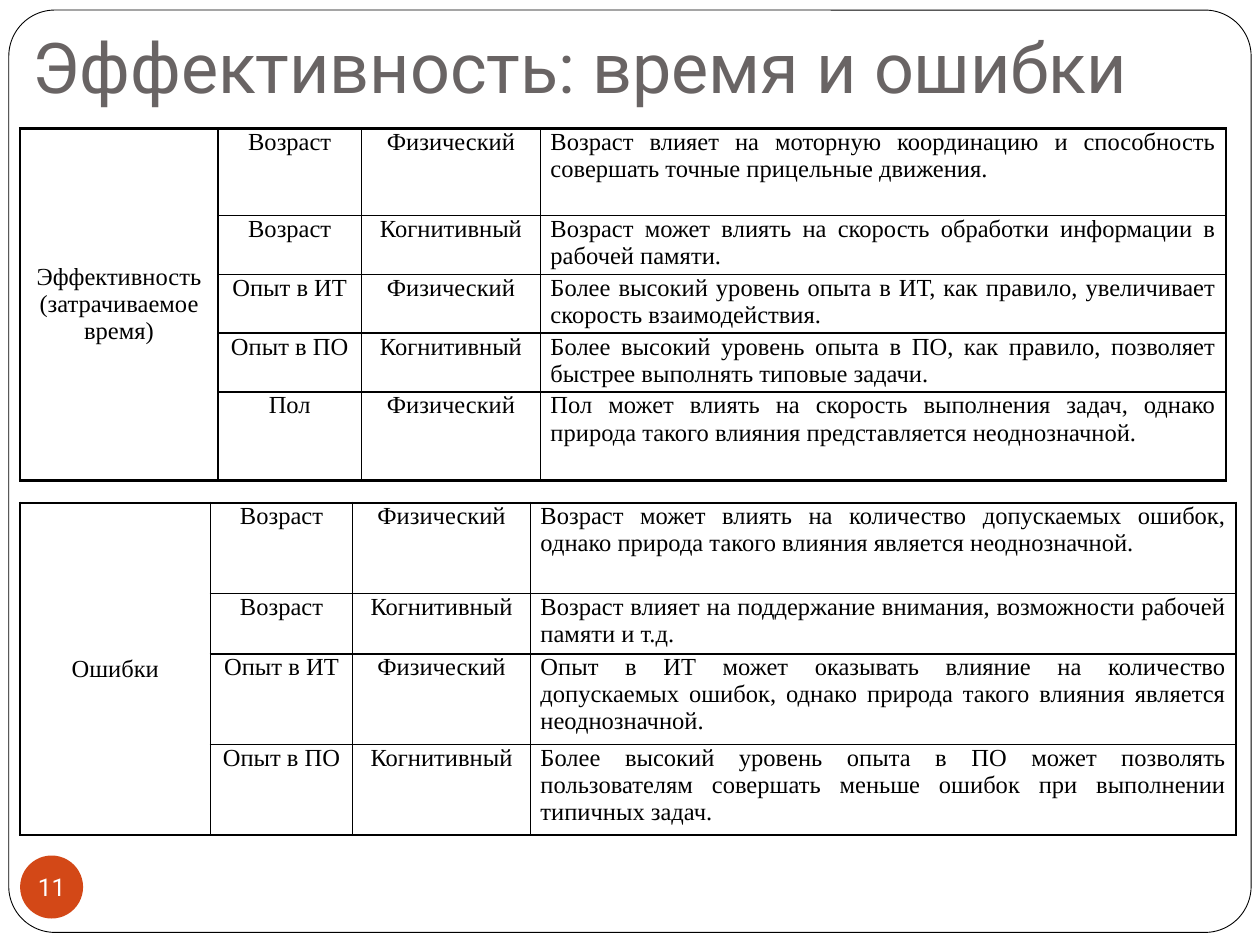
from lxml.etree import SubElement
from pptx import Presentation
from pptx.dml.color import RGBColor
from pptx.enum.shapes import MSO_SHAPE
from pptx.enum.text import MSO_ANCHOR, PP_ALIGN
from pptx.oxml.ns import qn
from pptx.util import Inches, Pt

BLACK = RGBColor(0x00, 0x00, 0x00)
WHITE = RGBColor(0xFF, 0xFF, 0xFF)
GRAY = RGBColor(0x69, 0x64, 0x64)
ORANGE = RGBColor(0xD3, 0x48, 0x17)

TIME = [
    ("Возраст", "Физический", "Возраст влияет на моторную координацию и способность совершать точные прицельные движения."),
    ("Возраст", "Когнитивный", "Возраст может влиять на скорость обработки информации в рабочей памяти."),
    ("Опыт в ИТ", "Физический", "Более высокий уровень опыта в ИТ, как правило, увеличивает скорость взаимодействия."),
    ("Опыт в ПО", "Когнитивный", "Более высокий уровень опыта в ПО, как правило, позволяет быстрее выполнять типовые задачи."),
    ("Пол", "Физический", "Пол может влиять на скорость выполнения задач, однако природа такого влияния представляется неоднозначной."),
]
ERRORS = [
    ("Возраст", "Физический", "Возраст может влиять на количество допускаемых ошибок, однако природа такого влияния является неоднозначной."),
    ("Возраст", "Когнитивный", "Возраст влияет на поддержание внимания, возможности рабочей памяти и т.д."),
    ("Опыт в ИТ", "Физический", "Опыт в ИТ может оказывать влияние на количество допускаемых ошибок, однако природа такого влияния является неоднозначной."),
    ("Опыт в ПО", "Когнитивный", "Более высокий уровень опыта в ПО может позволять пользователям совершать меньше ошибок при выполнении типичных задач."),
]


def set_font(para, name, size, color):
    para.font.name = name
    para.font.size = Pt(size)
    para.font.color.rgb = color


def set_pads(frame, left, top, right, bottom):
    frame.margin_left, frame.margin_top = Inches(left), Inches(top)
    frame.margin_right, frame.margin_bottom = Inches(right), Inches(bottom)


def add_shape(slide, kind, box, fill):
    shape = slide.shapes.add_shape(kind, *map(Inches, box))
    shape.shadow.inherit = False
    shape.fill.solid()
    shape.fill.fore_color.rgb = fill
    return shape


def add_frame(slide):
    frame = add_shape(slide, MSO_SHAPE.ROUNDED_RECTANGLE, (0.07, 0.08, 9.86, 7.32), WHITE)
    frame.adjustments[0] = 0.05
    frame.line.color.rgb = BLACK
    frame.line.width = Pt(0.5)


def add_title(slide, text):
    box = slide.shapes.add_textbox(*map(Inches, (0.16, 0.08, 9.69, 0.87)))
    frame = box.text_frame
    frame.word_wrap = True
    frame.vertical_anchor = MSO_ANCHOR.BOTTOM
    set_pads(frame, 0.1, 0.05, 0.1, 0.1)
    frame.text = text
    set_font(frame.paragraphs[0], "Roboto", 40, GRAY)


def add_badge(slide, text):
    badge = add_shape(slide, MSO_SHAPE.OVAL, (0.16, 6.79, 0.5, 0.5), ORANGE)
    badge.line.fill.background()
    frame = badge.text_frame
    frame.word_wrap = False
    frame.vertical_anchor = MSO_ANCHOR.MIDDLE
    set_pads(frame, 0, 0, 0, 0)
    frame.text = text
    para = frame.paragraphs[0]
    para.alignment = PP_ALIGN.CENTER
    set_font(para, "Roboto", 14, WHITE)


def set_edges(cell, outer):
    props = cell._tc.get_or_add_tcPr()
    for side in "LRTB":
        width = Pt(1.5 if side in outer else 1)
        line = SubElement(props, qn(f"a:ln{side}"), w=str(width))
        fill = SubElement(line, qn("a:solidFill"))
        SubElement(fill, qn("a:srgbClr"), val=str(BLACK))


def fill_cell(cell, text, align):
    set_pads(cell, 0.08, 0, 0.08, 0)
    cell.text = text
    para = cell.text_frame.paragraphs[0]
    para.alignment = align
    para.space_before = para.space_after = Pt(2)
    set_font(para, "Times New Roman", 14, BLACK)


def add_table(slide, top, widths, heights, head, rows):
    last = len(rows) - 1
    size = map(Inches, (0.16, top, sum(widths), sum(heights)))
    table = slide.shapes.add_table(len(rows), len(widths), *size).table
    table.first_row = table.horz_banding = False
    for col, width in zip(table.columns, widths):
        col.width = Inches(width)
    for row, height in zip(table.rows, heights):
        row.height = Inches(height)
    for r, row in enumerate(rows):
        for c, text in enumerate(("" if r else head, *row)):
            cell = table.cell(r, c)
            sides = {"L": c == 0, "R": c == 3, "T": r == 0 or c == 0, "B": r == last or c == 0}
            set_edges(cell, [side for side, outer in sides.items() if outer])
            cell.fill.background()
            fill_cell(cell, text, PP_ALIGN.JUSTIFY if c == 3 else PP_ALIGN.CENTER)
    table.cell(0, 0).merge(table.cell(last, 0))
    table.cell(0, 0).vertical_anchor = MSO_ANCHOR.MIDDLE


def main():
    deck = Presentation()
    deck.slide_width, deck.slide_height = Inches(10), Inches(7.5)
    slide = deck.slides.add_slide(deck.slide_layouts[6])
    add_frame(slide)
    add_title(slide, "Эффективность: время и ошибки")
    add_badge(slide, "11")
    add_table(slide, 1.02, (1.57, 1.14, 1.42, 5.44), (0.69, 0.46, 0.46, 0.46, 0.69),
              "Эффективность (затрачиваемое время)", TIME)
    add_table(slide, 3.99, (1.51, 1.13, 1.41, 5.6), (0.72, 0.48, 0.72, 0.72), "Ошибки", ERRORS)
    deck.save("out.pptx")


if __name__ == "__main__":
    main()
